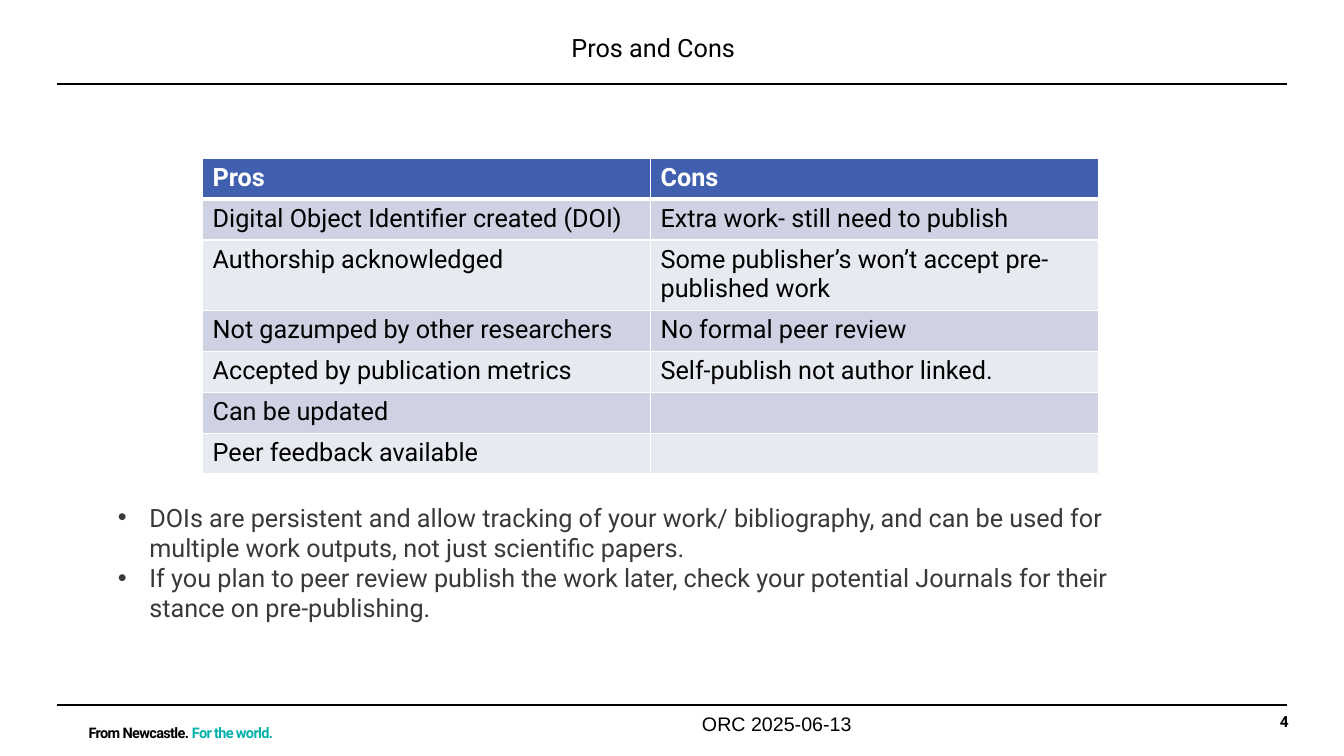
from lxml import etree
from pptx import Presentation
from pptx.dml.color import RGBColor
from pptx.enum.shapes import MSO_CONNECTOR
from pptx.enum.text import MSO_ANCHOR, MSO_AUTO_SIZE, PP_ALIGN
from pptx.oxml.ns import qn
from pptx.util import Pt

LEFT, CENTER, RIGHT = PP_ALIGN.LEFT, PP_ALIGN.CENTER, PP_ALIGN.RIGHT
TOP = MSO_ANCHOR.TOP
NO_AUTOFIT = MSO_AUTO_SIZE.NONE
STRAIGHT = MSO_CONNECTOR.STRAIGHT

BLACK, WHITE, GREY, TEAL = "000000", "FFFFFF", "3B3838", "00B2A9"
HEADER_FILL = "4060AF"
BAND_FILLS = ("E8EAF2", "CFD2E3")
ROW_HEIGHT, TALL_ROW, TALL_ROW_HEIGHT = 29.2, 2, 50.4
COLUMN_WIDTH = 320

ROWS = [
    ("Pros", "Cons"),
    ("Digital Object Identifier created (DOI)", "Extra work- still need to publish"),
    ("Authorship acknowledged", "Some publisher’s won’t accept pre-published work"),
    ("Not gazumped by other researchers", "No formal peer review"),
    ("Accepted by publication metrics", "Self-publish not author linked."),
    ("Can be updated", ""),
    ("Peer feedback available", ""),
]
NOTES = [
    "DOIs are persistent and allow tracking of your work/ bibliography, "
    "and can be used for multiple work outputs, not just scientific papers.",
    "If you plan to peer review publish the work later, "
    "check your potential Journals for their stance on pre-publishing.",
]


def rgb(color):
    return RGBColor.from_string(color)


def write(p, text, size=18, font="Roboto", color=BLACK, bold=False, align=LEFT):
    p.alignment = align
    r = p.add_run()
    r.text = text
    r.font.size = Pt(size)
    r.font.name = font
    r.font.bold = bold
    r.font.color.rgb = rgb(color)
    return r


def place(sp, x, y, w, h, inset_x=7.2, inset_y=3.6, wrap=True):
    """Set position and text frame; return the text frame."""
    sp.left, sp.top, sp.width, sp.height = Pt(x), Pt(y), Pt(w), Pt(h)
    tf = sp.text_frame
    tf.margin_left = tf.margin_right = Pt(inset_x)
    tf.margin_top = tf.margin_bottom = Pt(inset_y)
    tf.vertical_anchor = TOP
    tf.auto_size = NO_AUTOFIT
    tf.word_wrap = wrap
    return tf


def add_text(s, x, y, w, h, text, **style):
    sp = s.shapes.add_textbox(0, 0, 0, 0)
    tf = place(sp, x, y, w, h, inset_x=0, inset_y=0)
    write(tf.paragraphs[0], text, **style)


def add_rule(s, y):
    line = s.shapes.add_connector(STRAIGHT, Pt(40.5), Pt(y), Pt(919.5), Pt(y))
    line.line.color.rgb = rgb(BLACK)
    line.line.width = Pt(1)
    etree.SubElement(line.element.spPr, qn("a:effectLst"))


def add_bullet(p, indent):
    pPr = p._p.get_or_add_pPr()
    pPr.set("marL", str(Pt(indent)))
    pPr.set("indent", str(-Pt(indent)))
    etree.SubElement(pPr, qn("a:buFont"), typeface="Arial")
    etree.SubElement(pPr, qn("a:buChar"), char="•")


def set_borders(cell, **widths):
    """Draw white borders; keys are L, R, T and B."""
    tcPr = cell._tc.get_or_add_tcPr()
    for side, width in widths.items():
        ln = etree.SubElement(tcPr, qn(f"a:ln{side}"), w=str(Pt(width)))
        fill = etree.SubElement(ln, qn("a:solidFill"))
        etree.SubElement(fill, qn("a:srgbClr"), val=WHITE)


def add_pros_and_cons(s):
    frame = s.shapes.add_table(len(ROWS), 2, Pt(144.7), Pt(113), Pt(2 * COLUMN_WIDTH),
                               Pt(ROW_HEIGHT * len(ROWS)))
    table = frame.table
    for column in table.columns:
        column.width = Pt(COLUMN_WIDTH)
    for i, texts in enumerate(ROWS):
        header = i == 0
        table.rows[i].height = Pt(TALL_ROW_HEIGHT if i == TALL_ROW else ROW_HEIGHT)
        for j, text in enumerate(texts):
            cell = table.cell(i, j)
            set_borders(cell, L=1, R=1, T=3 if i == 1 else 1, B=3 if header else 1)
            cell.fill.solid()
            cell.fill.fore_color.rgb = rgb(HEADER_FILL if header else BAND_FILLS[i % 2])
            if text:
                write(cell.text_frame.paragraphs[0], text,
                      color=WHITE if header else BLACK, bold=header)


def add_notes(body):
    tf = place(body, 77, 355, 765, 138)
    for i, note in enumerate(NOTES):
        p = tf.add_paragraph() if i else tf.paragraphs[0]
        add_bullet(p, 22.5)
        p.space_before = Pt(0)
        write(p, note, color=GREY)


def add_tagline(s):
    sp = s.shapes.add_textbox(0, 0, 0, 0)
    tf = place(sp, 56.2, 511.2, 146, 29, wrap=False)
    for text, color in (("From Newcastle. ", BLACK), ("For the world.", TEAL)):
        r = write(tf.paragraphs[0], text, color=color, bold=True)
        rPr = r._r.get_or_add_rPr()
        rPr.set("baseline", "30000")
        rPr.set("spc", "-50")


def main():
    prs = Presentation()
    prs.slide_width, prs.slide_height = Pt(960), Pt(540)
    s = prs.slides.add_slide(prs.slide_layouts[1])
    title, body = s.placeholders

    for y in (60, 503.5):
        add_rule(s, y)
    add_tagline(s)
    add_text(s, 243.4, 508.3, 623, 29, "ORC 2025-06-13", size=14, font="Arial", align=CENTER)
    add_text(s, 870.5, 508.3, 50, 27, "4", size=11, bold=True, align=RIGHT)
    write(place(title, 401, 19.4, 307.4, 29).paragraphs[0], "Pros and Cons")
    add_pros_and_cons(s)
    add_notes(body)
    prs.save("out.pptx")


if __name__ == "__main__":
    main()
